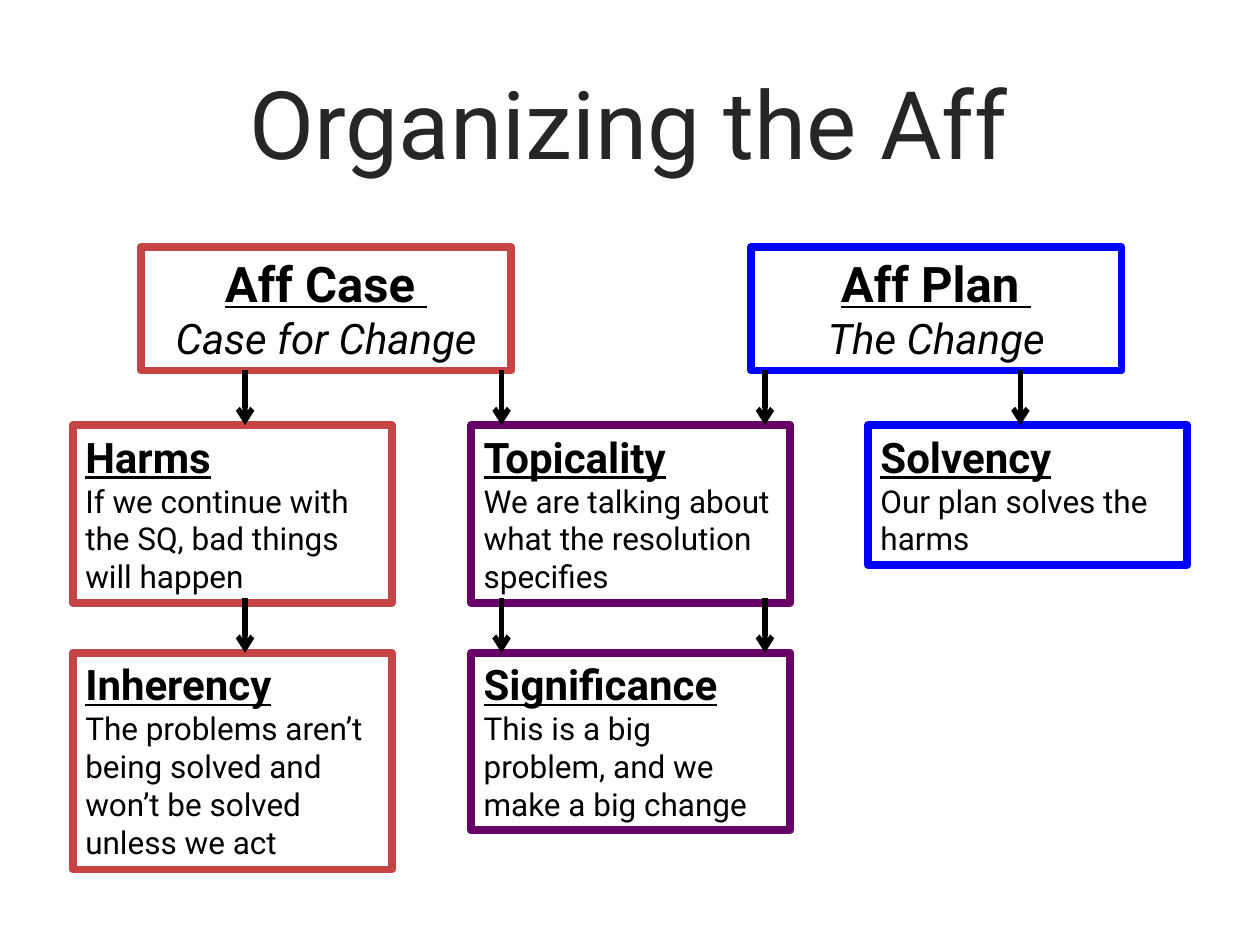
from pptx import Presentation
from pptx.dml.color import RGBColor
from pptx.enum import shapes, text
from pptx.oxml.ns import qn
from pptx.util import Cm, Pt
from lxml import etree

FONT = "Roboto"
RED, BLUE, PLUM, BLACK = "C74444", "0000FF", "660066", "000000"
CENTER, LEFT = text.PP_ALIGN.CENTER, text.PP_ALIGN.LEFT


def color(code):
    return RGBColor.from_string(code)


def style(para, size, align, code=BLACK, **marks):
    para.alignment = align
    for run in para.runs:
        font = run.font
        font.name, font.size = FONT, Pt(size)
        font.color.rgb = color(code)
        for mark, value in marks.items():
            setattr(font, mark, value)


def add_title(slide, box, words):
    title = slide.shapes.title
    title.left, title.top, title.width, title.height = map(Cm, box)
    frame = title.text_frame
    frame.text = words
    frame.vertical_anchor = text.MSO_ANCHOR.MIDDLE
    style(frame.paragraphs[0], 54, CENTER, "262626")


def add_card(slide, box, edge, head, body, sizes, align=LEFT, italic=False):
    card = slide.shapes.add_shape(shapes.MSO_SHAPE.RECTANGLE, *map(Cm, box))
    card.shadow.inherit = False
    card.fill.solid()
    card.fill.fore_color.rgb = color("FFFFFF")
    card.line.color.rgb = color(edge)
    card.line.width = Pt(4.5)
    frame = card.text_frame
    frame.word_wrap = True
    frame.auto_size = text.MSO_AUTO_SIZE.SHAPE_TO_FIT_TEXT
    frame.vertical_anchor = text.MSO_ANCHOR.TOP
    frame.text = f"{head}\n{body}"
    first, second = frame.paragraphs
    style(first, sizes[0], align, bold=True, underline=True)
    style(second, sizes[1], align, italic=italic)


def add_arrow(slide, x, y, drop=1.11):
    arrow = slide.shapes.add_connector(
        shapes.MSO_CONNECTOR.STRAIGHT, Cm(x), Cm(y), Cm(x), Cm(y + drop))
    arrow.line.color.rgb = color(BLACK)
    arrow.line.width = Pt(3)
    props = arrow.element.spPr
    etree.SubElement(props.find(qn("a:ln")), qn("a:tailEnd"), type="arrow")
    etree.SubElement(props, qn("a:effectLst"))


def add_chart_tree(slide, left, top):
    # Top row: the two halves of the argument
    for x, edge, head, body in [
        (1.37, RED, "Aff Case ", "Case for Change"),
        (13.67, BLUE, "Aff Plan ", "The Change"),
    ]:
        add_card(slide, (left + x, top, 7.47, 2.49), edge, head, body,
                 (28, 24), CENTER, True)

    # Stock issues: column, row, height
    cols, rows = (0, 8.03, 16.03), (3.59, 8.18)
    for col, row, high, edge, head, body in [
        (0, 0, 3.58, RED, "Harms",
         "If we continue with the SQ, bad things will happen"),
        (0, 1, 4.37, RED, "Inherency",
         "The problems aren’t being solved and won’t be solved unless we act"),
        (1, 0, 3.58, PLUM, "Topicality",
         "We are talking about what the resolution specifies"),
        (1, 1, 3.58, PLUM, "Significance",
         "This is a big problem, and we make a big change"),
        (2, 0, 2.82, BLUE, "Solvency", "Our plan solves the harms"),
    ]:
        add_card(slide, (left + cols[col], top + rows[row], 6.43, high),
                 edge, head, body, (24, 18))

    # Arrows end on the row below
    for row, spots in zip(rows, [(3.47, 8.64, 13.95, 19.1),
                                 (3.47, 8.64, 13.95)]):
        for x in spots:
            add_arrow(slide, left + x, top + row - 1.11)


def main():
    deck = Presentation()
    deck.slide_width, deck.slide_height = Cm(25.4), Cm(19.05)
    slide = deck.slides.add_slide(deck.slide_layouts[5])
    add_title(slide, (2, 0.86, 21.36, 3.18), "Organizing the Aff")
    add_chart_tree(slide, 1.47, 4.98)
    deck.save("out.pptx")


if __name__ == "__main__":
    main()
